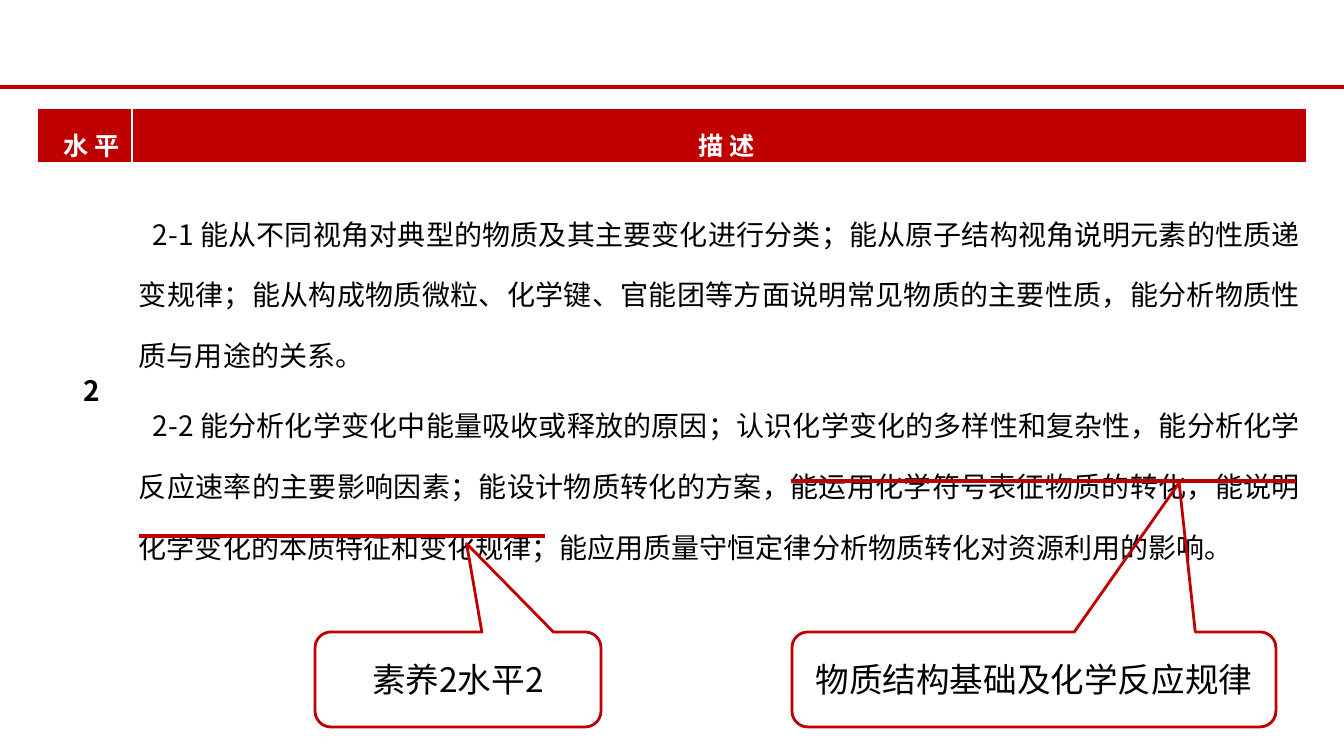
from pptx import Presentation
from pptx.dml.color import RGBColor
from pptx.enum.shapes import MSO_CONNECTOR as Link, MSO_SHAPE as Form
from pptx.enum.text import MSO_ANCHOR as Anchor, PP_ALIGN as Align
from pptx.oxml.ns import qn
from pptx.util import Pt
from lxml.etree import SubElement as Sub

RED = RGBColor(0xC0, 0x00, 0x00)
WHITE = RGBColor(0xFF, 0xFF, 0xFF)
BLACK = RGBColor(0x00, 0x00, 0x00)
FONT = "Noto Sans CJK SC"
WIDE, HIGH = 1344, 756

HEAD = ["水 平", "描 述"]
LEVEL = "2"
TEXTS = [
    "2-1 能从不同视角对典型的物质及其主要变化进行分类；能从原子结构视角说明元素的性质递变规律；"
    "能从构成物质微粒、化学键、官能团等方面说明常见物质的主要性质，能分析物质性质与用途的关系。",
    "2-2 能分析化学变化中能量吸收或释放的原因；认识化学变化的多样性和复杂性，"
    "能分析化学反应速率的主要影响因素；能设计物质转化的方案，能运用化学符号表征物质的转化，"
    "能说明化学变化的本质特征和变化规律；能应用质量守恒定律分析物质转化对资源利用的影响。",
]


def px(num):
    """Turn px into EMU at 100.8 px to the inch."""
    return round(num * 914400 / 100.8)


class Page:
    def __init__(self, deck):
        self.slide = deck.slides.add_slide(deck.slide_layouts[6])
        self.shapes = self.slide.shapes

    def text(self, para, words, size, color, bold=False, align=Align.CENTER):
        para.alignment = align
        run = para.add_run()
        run.text = words
        font = run.font
        font.name, font.size, font.bold = FONT, Pt(size), bold
        font.color.rgb = color
        Sub(run._r.get_or_add_rPr(), qn("a:ea"), typeface=FONT)

    def line(self, left, right, y):
        rule = self.shapes.add_connector(
            Link.STRAIGHT, px(left), px(y), px(right), px(y))
        rule.line.color.rgb = RED
        rule.line.width = Pt(2.25)
        Sub(rule._element.spPr, qn("a:effectLst"))

    def table(self, left, top, cols, rows):
        frame = self.shapes.add_table(
            len(rows), len(cols), px(left), px(top), px(sum(cols)), px(sum(rows)))
        grid = frame.table
        for col, width in zip(grid.columns, cols):
            col.width = px(width)
        for row, height in zip(grid.rows, rows):
            row.height = px(height)
        return grid

    def cell(self, cell, texts, size, color, fill, bold=True,
             align=Align.CENTER, gap=0):
        cell.fill.solid()
        cell.fill.fore_color.rgb = fill
        cell.vertical_anchor = Anchor.MIDDLE
        cell.margin_left = cell.margin_right = px(7)
        cell.margin_top = cell.margin_bottom = 0
        frame = cell.text_frame
        for num, words in enumerate(texts):
            para = frame.add_paragraph() if num else frame.paragraphs[0]
            para.line_spacing = 1.5
            para.space_before = Pt(gap)
            props = para._p.get_or_add_pPr()
            props.set("marL", "0")
            props.set("indent", str(px(14)))
            self.text(para, words, size, color, bold, align)

    def callout(self, left, top, width, height, tip, words, fill=None):
        """Add a red speech box; tip is the pointer offset as shares of its size."""
        box = self.shapes.add_shape(
            Form.ROUNDED_RECTANGULAR_CALLOUT,
            px(left), px(top), px(width), px(height))
        box.shadow.inherit = False
        for num, share in enumerate(tip):
            box.adjustments[num] = share
        if fill is None:
            box.fill.background()
        else:
            box.fill.solid()
            box.fill.fore_color.rgb = fill
        box.line.color.rgb = RED
        box.line.width = Pt(2)
        frame = box.text_frame
        frame.word_wrap = True
        frame.vertical_anchor = Anchor.MIDDLE
        self.text(frame.paragraphs[0], words, 24, BLACK)


def main():
    deck = Presentation()
    deck.slide_width, deck.slide_height = px(WIDE), px(HIGH)
    page = Page(deck)

    page.line(0, WIDE, 87)
    grid = page.table(37, 108, [95, 1175], [51, 433])
    for col, title in enumerate(HEAD):
        page.cell(grid.cell(0, col), [title], 18, WHITE, RED)
    page.cell(grid.cell(1, 0), [LEVEL], 20, BLACK, WHITE)
    page.cell(grid.cell(1, 1), TEXTS, 20, BLACK, WHITE,
              bold=False, align=Align.JUSTIFY, gap=6)

    page.callout(315, 632, 286, 95, (0.03, -1.43), "素养2水平2", WHITE)
    page.line(791, 1296, 481)
    page.callout(792, 632, 484, 95, (0.3, -2.07), "物质结构基础及化学反应规律")
    page.line(139, 545, 536)

    deck.save("out.pptx")


if __name__ == "__main__":
    main()
